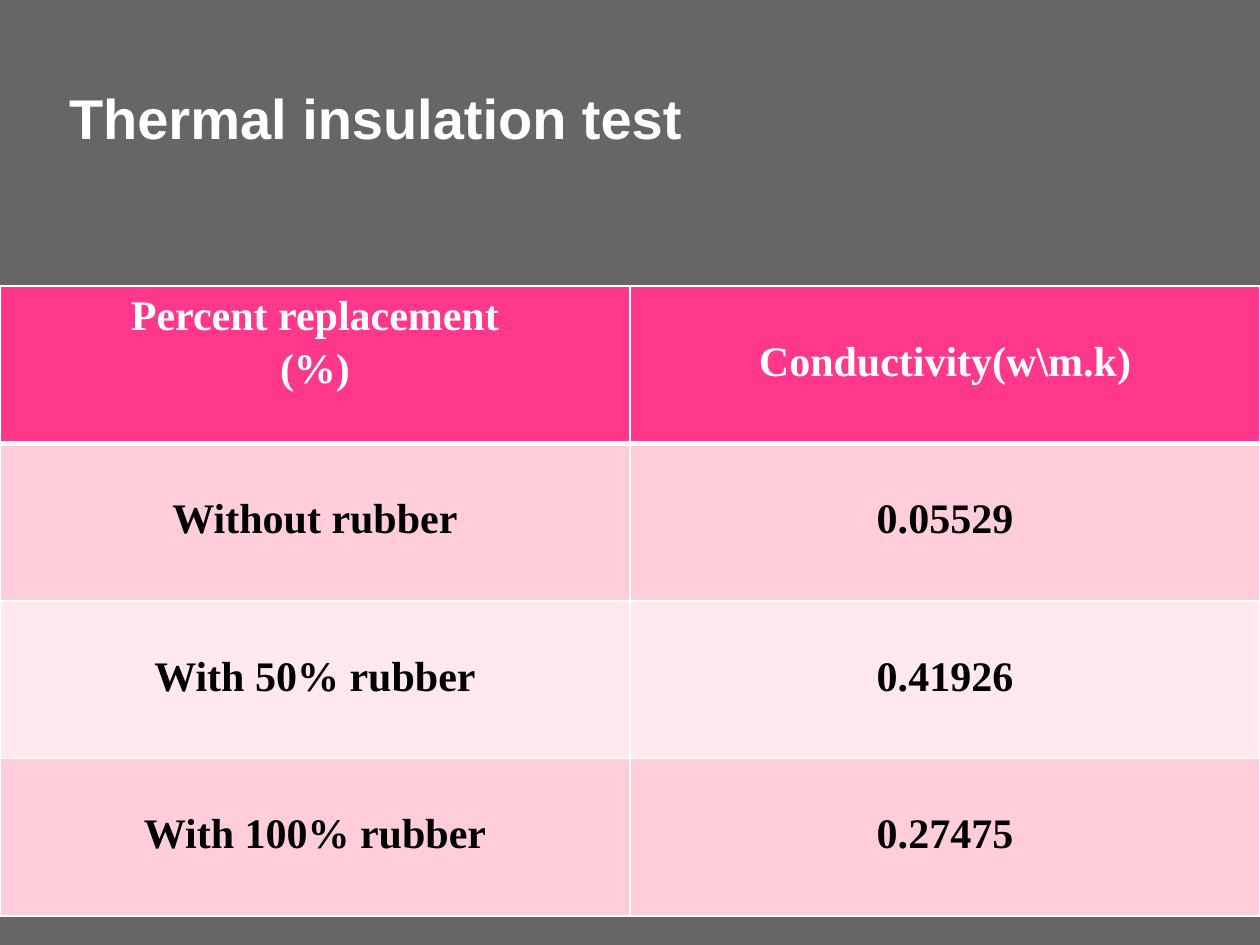
from lxml import etree
from pptx import Presentation
from pptx.dml.color import RGBColor
from pptx.enum.text import MSO_ANCHOR, PP_ALIGN
from pptx.oxml.ns import qn
from pptx.util import Emu, Pt

TOP, MIDDLE = MSO_ANCHOR.TOP, MSO_ANCHOR.MIDDLE
LEFT, CENTER = PP_ALIGN.LEFT, PP_ALIGN.CENTER

TITLE = "Thermal insulation test"
ROWS = [
    (["Percent replacement", "(%)"], ["Conductivity(w\\m.k)"]),
    (["Without rubber"], ["0.05529"]),
    (["With 50% rubber"], ["0.41926"]),
    (["With 100% rubber"], ["0.27475"]),
]
HEADER_FILL = "FF388C"
BAND_FILLS = ["FFCEDA", "FFE8EE"]
WHITE, BLACK, BACKGROUND = "FFFFFF", "000000", "666666"

SLIDE_WIDTH, SLIDE_HEIGHT = 1260, 945
TITLE_BOX = (63, 38, 1029, 158)
TITLE_INSET = 6
TABLE_BOX = (0, 286, 1260, 630)
CELL_INSET = 9
SINGLE_LINE_TOP = 46


def px(length):
    return Emu(round(length * 914400 / 126))


def color(value):
    return RGBColor.from_string(value)


def add_run(paragraph, text, font, size, ink):
    run = paragraph.add_run()
    run.text = text
    run.font.name = font
    run.font.size = Pt(size)
    run.font.bold = True
    run.font.color.rgb = color(ink)


def set_borders(cell, widths):
    properties = cell._tc.get_or_add_tcPr()
    for side, width in widths.items():
        line = etree.SubElement(properties, qn(f"a:ln{side}"), w=str(Pt(width)))
        fill = etree.SubElement(line, qn("a:solidFill"))
        etree.SubElement(fill, qn("a:srgbClr"), val=WHITE)


def fill_cell(cell, lines, row):
    is_header = row == 0
    set_borders(cell, {"L": 1, "R": 1, "T": 3 if row == 1 else 1, "B": 3 if is_header else 1})
    cell.fill.solid()
    cell.fill.fore_color.rgb = color(HEADER_FILL if is_header else BAND_FILLS[(row - 1) % 2])
    cell.margin_left = cell.margin_right = px(CELL_INSET)
    cell.margin_top = px(SINGLE_LINE_TOP if len(lines) == 1 else 0)
    cell.margin_bottom = 0
    cell.vertical_anchor = TOP
    frame = cell.text_frame
    for index, line in enumerate(lines):
        paragraph = frame.add_paragraph() if index else frame.paragraphs[0]
        paragraph.alignment = CENTER
        paragraph.line_spacing = 1.15
        add_run(paragraph, line, "Times New Roman", 24, WHITE if is_header else BLACK)


def add_title(slide):
    title = slide.shapes.title
    title.left, title.top, title.width, title.height = map(px, TITLE_BOX)
    frame = title.text_frame
    frame.word_wrap = True
    frame.vertical_anchor = MIDDLE
    frame.margin_left = frame.margin_right = px(TITLE_INSET)
    frame.margin_top = frame.margin_bottom = px(TITLE_INSET)
    paragraph = frame.paragraphs[0]
    paragraph.alignment = LEFT
    add_run(paragraph, TITLE, "Arial", 32, WHITE)


def add_results_table(slide):
    columns = len(ROWS[0])
    table = slide.shapes.add_table(len(ROWS), columns, *map(px, TABLE_BOX)).table
    for column in table.columns:
        column.width = px(TABLE_BOX[2] / columns)
    for row, texts in enumerate(ROWS):
        table.rows[row].height = px(TABLE_BOX[3] / len(ROWS))
        for column, lines in enumerate(texts):
            fill_cell(table.cell(row, column), lines, row)


def main():
    presentation = Presentation()
    presentation.slide_width = px(SLIDE_WIDTH)
    presentation.slide_height = px(SLIDE_HEIGHT)
    slide = presentation.slides.add_slide(presentation.slide_layouts[5])
    slide.background.fill.solid()
    slide.background.fill.fore_color.rgb = color(BACKGROUND)
    add_title(slide)
    add_results_table(slide)
    presentation.save("out.pptx")


if __name__ == "__main__":
    main()
